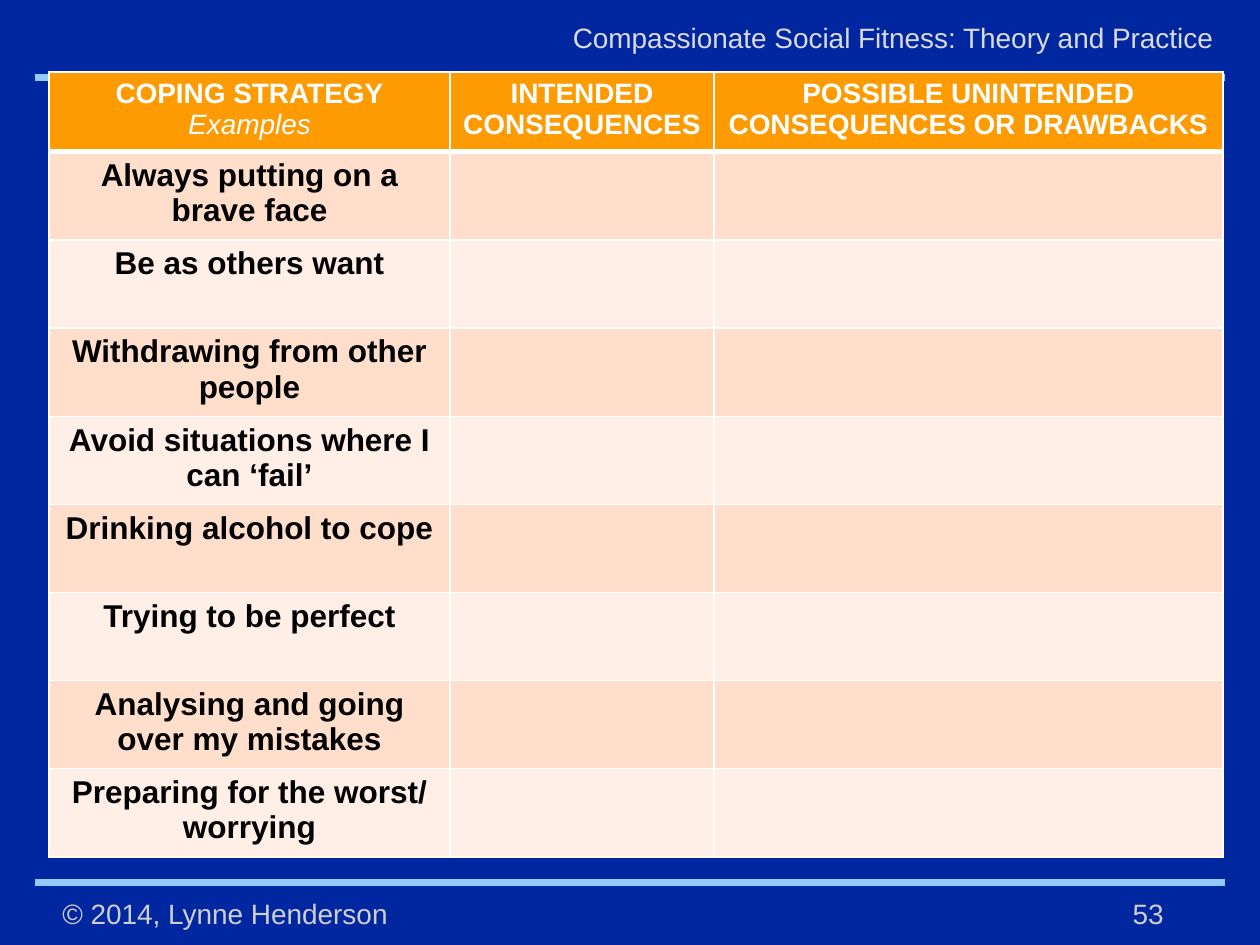
from lxml import etree
from pptx import Presentation
from pptx.dml.color import RGBColor
from pptx.enum.shapes import MSO_CONNECTOR
from pptx.enum.text import MSO_ANCHOR, PP_ALIGN
from pptx.oxml.ns import qn
from pptx.util import Pt

LEFT, CENTER, RIGHT = PP_ALIGN.LEFT, PP_ALIGN.CENTER, PP_ALIGN.RIGHT
STRAIGHT, TOP = MSO_CONNECTOR.STRAIGHT, MSO_ANCHOR.TOP
PX = 914400 // 126
FONT = "Arial"

COLORS = {
    "background": "00279F", "rule": "92CAFA", "header": "FE9B03",
    "band_dark": "FFDECB", "band_light": "FFEFE7",
    "title": "DADADA", "footer": "CECECE", "white": "FFFFFF", "black": "000000",
}

TITLE = "Compassionate Social Fitness: Theory and Practice"
FOOTERS = [  # text, left, width, alignment
    ("© 2014, Lynne Henderson", 50, 354, LEFT),
    ("53", 1116, 60, RIGHT),
]
HEADERS = [
    ["COPING STRATEGY", "Examples"],
    ["INTENDED CONSEQUENCES"],
    ["POSSIBLE UNINTENDED CONSEQUENCES OR DRAWBACKS"],
]
STRATEGIES = [
    "Always putting on a brave face",
    "Be as others want",
    "Withdrawing from other people",
    "Avoid situations where I can ‘fail’",
    "Drinking alcohol to cope",
    "Trying to be perfect",
    "Analysing and going over my mistakes",
    "Preparing for the worst/ worrying",
]
COLUMNS = [401, 264, 509]
HEADER_H, ROW_H = 79, 88
RULE_LEFT, RULE_RIGHT, RULE_TOPS = 35, 1225, (78, 883)


def px(*values):
    return [v * PX for v in values]


def rgb(name):
    return RGBColor.from_string(COLORS[name])


def add_text(p, text, size, color, align, bold=False, italic=False):
    p.alignment = align
    r = p.add_run()
    r.text = text
    font = r.font
    font.name, font.size, font.bold, font.italic = FONT, Pt(size), bold, italic
    font.color.rgb = rgb(color)


def set_borders(cell, **widths):
    """Draw white cell borders; widths are in points, by side L, R, T, B."""
    tc_pr = cell._tc.get_or_add_tcPr()
    for side, width in widths.items():
        ln = etree.SubElement(tc_pr, qn(f"a:ln{side}"), w=str(Pt(width)))
        fill = etree.SubElement(ln, qn("a:solidFill"))
        etree.SubElement(fill, qn("a:srgbClr"), val=COLORS["white"])


def add_rule(slide, y):
    line = slide.shapes.add_connector(STRAIGHT, *px(RULE_LEFT, y, RULE_RIGHT, y))
    line.line.color.rgb = rgb("rule")
    line.line.width = Pt(4)
    etree.SubElement(line._element.spPr, qn("a:effectLst"))


def add_title(slide):
    sp = slide.shapes.title
    sp.left, sp.top, sp.width, sp.height = px(534, 14, 692, 47)
    tf = sp.text_frame
    tf.vertical_anchor = TOP
    add_text(tf.paragraphs[0], TITLE, 16, "title", RIGHT)


def add_footer(slide, text, left, width, align):
    tf = slide.shapes.add_textbox(*px(left, 890, width, 47)).text_frame
    tf.word_wrap = False
    add_text(tf.paragraphs[0], text, 16, "footer", align)


def add_strategy_table(slide):
    heights = [HEADER_H] + [ROW_H] * len(STRATEGIES)
    table = slide.shapes.add_table(
        len(heights), len(COLUMNS), *px(49, 72, sum(COLUMNS), sum(heights))).table
    for column, width in zip(table.columns, COLUMNS):
        column.width = width * PX
    for i, (row, height) in enumerate(zip(table.rows, heights)):
        row.height = height * PX
        band = "header" if i == 0 else "band_dark" if i % 2 else "band_light"
        for cell in row.cells:
            set_borders(cell, L=1, R=1, T=3 if i == 1 else 1, B=3 if i == 0 else 1)
            cell.fill.solid()
            cell.fill.fore_color.rgb = rgb(band)

    for j, lines in enumerate(HEADERS):
        tf = table.cell(0, j).text_frame
        for n, line in enumerate(lines):
            p = tf.add_paragraph() if n else tf.paragraphs[0]
            add_text(p, line, 16, "white", CENTER, bold=n == 0, italic=n > 0)
    for i, strategy in enumerate(STRATEGIES, 1):
        p = table.cell(i, 0).text_frame.paragraphs[0]
        add_text(p, strategy, 18, "black", CENTER, bold=True)


def main():
    prs = Presentation()
    prs.slide_width, prs.slide_height = px(1260, 945)
    slide = prs.slides.add_slide(prs.slide_layouts[5])
    slide.background.fill.solid()
    slide.background.fill.fore_color.rgb = rgb("background")
    for y in RULE_TOPS:
        add_rule(slide, y)
    add_title(slide)
    for footer in FOOTERS:
        add_footer(slide, *footer)
    add_strategy_table(slide)
    prs.save("out.pptx")


if __name__ == "__main__":
    main()
